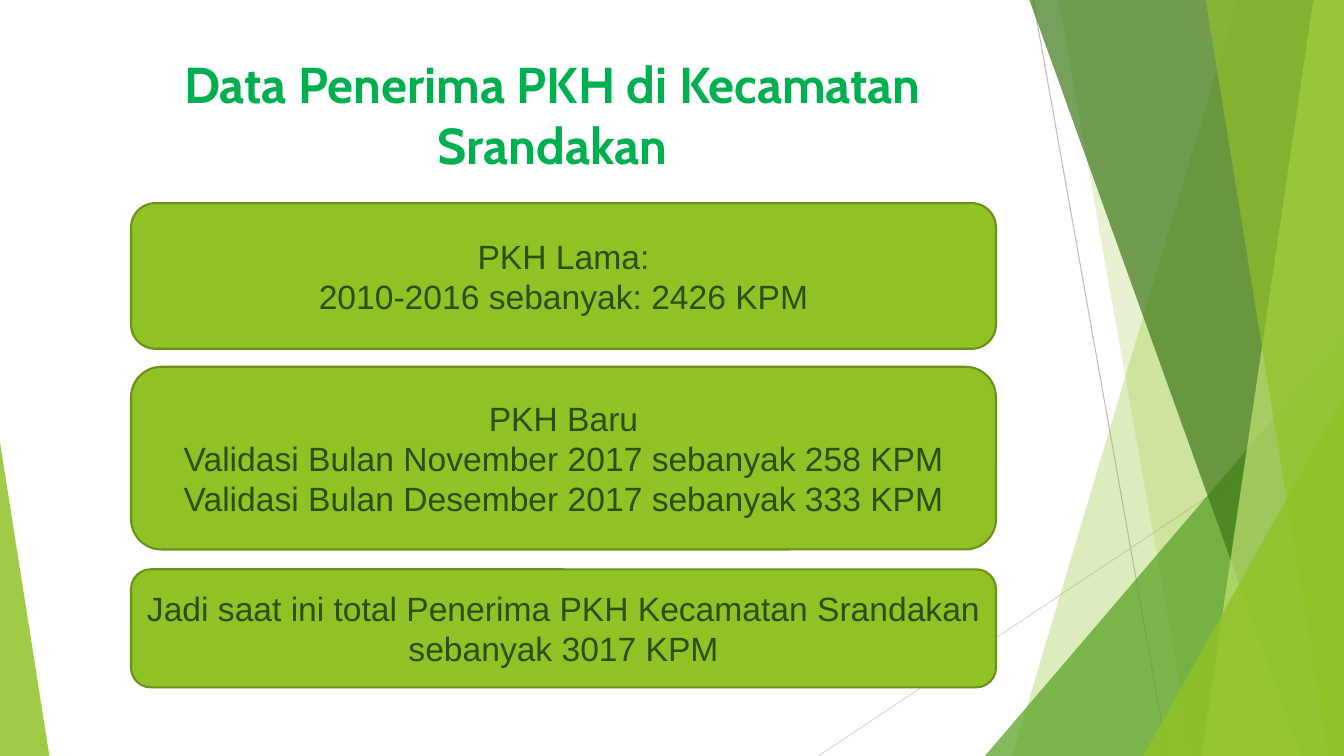
from dataclasses import dataclass

from lxml.etree import SubElement
from pptx import Presentation
from pptx.dml.color import RGBColor as RGB
from pptx.enum.shapes import MSO_CONNECTOR as Connector, MSO_SHAPE as Shape
from pptx.enum.text import MSO_ANCHOR as Anchor, MSO_AUTO_SIZE as AutoSize, PP_ALIGN as Align
from pptx.oxml.ns import qn
from pptx.util import Pt


@dataclass(frozen=True)
class Theme:
    lime: str = "90C226"
    green: str = "54A021"
    forest: str = "3F7819"
    pale: str = "C0E474"
    border: str = "6B901C"
    title: str = "00B050"
    body: str = "2A5010"
    title_font: str = "Cabin"
    body_font: str = "Arial"
    title_size: float = 36
    body_size: float = 24


@dataclass(frozen=True)
class Ray:
    x1: float
    y1: float
    x2: float
    y2: float
    color: str


@dataclass(frozen=True)
class Facet:
    top_x: float
    bottom_x: float
    color: str
    opacity: int


@dataclass(frozen=True)
class Corner:
    left: float
    top: float
    width: float
    adjustment: float
    color: str
    opacity: int


@dataclass(frozen=True)
class Card:
    top: float
    height: float
    lines: tuple[str, ...]


THEME = Theme()
WIDTH, HEIGHT = 960, 540
FACET_TOP = -0.6
CARD_LEFT, CARD_WIDTH = 93.6, 617.8

DECOR = [
    Ray(738, 0, 834, HEIGHT, "BFBFBF"),
    Ray(WIDTH, 290, 584.6, HEIGHT, "D9D9D9"),
    Facet(884.2, 723, THEME.lime, 30),
    Facet(756, 851.8, THEME.lime, 20),
    Corner(703.5, 240, 256.5, 1, THEME.green, 72),
    Facet(735.1, 929.5, THEME.forest, 70),
    Facet(938.2, 858.2, THEME.pale, 70),
    Facet(861.1, 949, THEME.lime, 65),
    Corner(816.5, 283, 143.5, 1, THEME.lime, 80),
    Corner(0, 316, 35.3, 0, THEME.lime, 85),
]

CARDS = [
    Card(145.1, 104, ("PKH Lama:", "2010-2016 sebanyak: 2426 KPM")),
    Card(262, 130.5, (
        "PKH Baru",
        "Validasi Bulan November 2017 sebanyak 258 KPM",
        "Validasi Bulan Desember 2017 sebanyak 333 KPM",
    )),
    Card(406.7, 84.3, (
        "Jadi saat ini total Penerima PKH Kecamatan Srandakan sebanyak 3017 KPM",
    )),
]


def write(tf, *lines: str, font: str, size: float, color: str,
          bold: bool = False, anchor=Anchor.MIDDLE) -> None:
    tf.word_wrap = True
    tf.auto_size = AutoSize.NONE
    tf.vertical_anchor = anchor
    for i, line in enumerate(lines):
        p = tf.add_paragraph() if i else tf.paragraphs[0]
        p.alignment = Align.CENTER
        r = p.add_run()
        r.text = line
        r.font.name = font
        r.font.size = Pt(size)
        r.font.bold = bold
        r.font.color.rgb = RGB.from_string(color)


def paint(sp, color: str, opacity: int = 100) -> None:
    sp.shadow.inherit = False
    sp.fill.solid()
    sp.fill.fore_color.rgb = RGB.from_string(color)
    if opacity < 100:
        clr = sp.element.spPr.find(f"{qn('a:solidFill')}/{qn('a:srgbClr')}")
        SubElement(clr, qn("a:alpha")).set("val", str(opacity * 1000))
    sp.line.fill.background()


def draw_ray(s, ray: Ray) -> None:
    line = s.shapes.add_connector(
        Connector.STRAIGHT, Pt(ray.x1), Pt(ray.y1), Pt(ray.x2), Pt(ray.y2))
    line.line.width = Pt(0.75)
    line.line.color.rgb = RGB.from_string(ray.color)
    SubElement(line.element.spPr, qn("a:effectLst"))


def draw_facet(s, facet: Facet) -> None:
    outline = s.shapes.build_freeform(Pt(facet.top_x), Pt(FACET_TOP))
    outline.add_line_segments([
        (Pt(WIDTH), Pt(FACET_TOP)),
        (Pt(WIDTH), Pt(HEIGHT)),
        (Pt(facet.bottom_x), Pt(HEIGHT)),
    ], close=True)
    paint(outline.convert_to_shape(), facet.color, facet.opacity)


def draw_corner(s, corner: Corner) -> None:
    sp = s.shapes.add_shape(
        Shape.ISOSCELES_TRIANGLE, Pt(corner.left), Pt(corner.top),
        Pt(corner.width), Pt(HEIGHT - corner.top))
    sp.adjustments[0] = corner.adjustment
    paint(sp, corner.color, corner.opacity)


def draw_card(s, card: Card) -> None:
    sp = s.shapes.add_shape(
        Shape.ROUNDED_RECTANGLE, Pt(CARD_LEFT), Pt(card.top),
        Pt(CARD_WIDTH), Pt(card.height))
    paint(sp, THEME.lime)
    sp.line.color.rgb = RGB.from_string(THEME.border)
    sp.line.width = Pt(1.5)
    write(sp.text_frame, *card.lines, font=THEME.body_font,
          size=THEME.body_size, color=THEME.body)


def draw_title(s, text: str) -> None:
    title = s.shapes.title
    title.left, title.top = Pt(56.2), Pt(34.6)
    title.width, title.height = Pt(676.8), Pt(103.7)
    write(title.text_frame, text, font=THEME.title_font, size=THEME.title_size,
          color=THEME.title, bold=True, anchor=Anchor.TOP)
    s.shapes.element.append(title.element)


def main() -> None:
    prs = Presentation()
    prs.slide_width, prs.slide_height = Pt(WIDTH), Pt(HEIGHT)
    s = prs.slides.add_slide(prs.slide_layouts.get_by_name("Title Only"))
    painters = {Ray: draw_ray, Facet: draw_facet, Corner: draw_corner}
    for item in DECOR:
        painters[type(item)](s, item)
    draw_title(s, "Data Penerima PKH di Kecamatan Srandakan")
    for card in CARDS:
        draw_card(s, card)
    prs.save("out.pptx")


if __name__ == "__main__":
    main()
